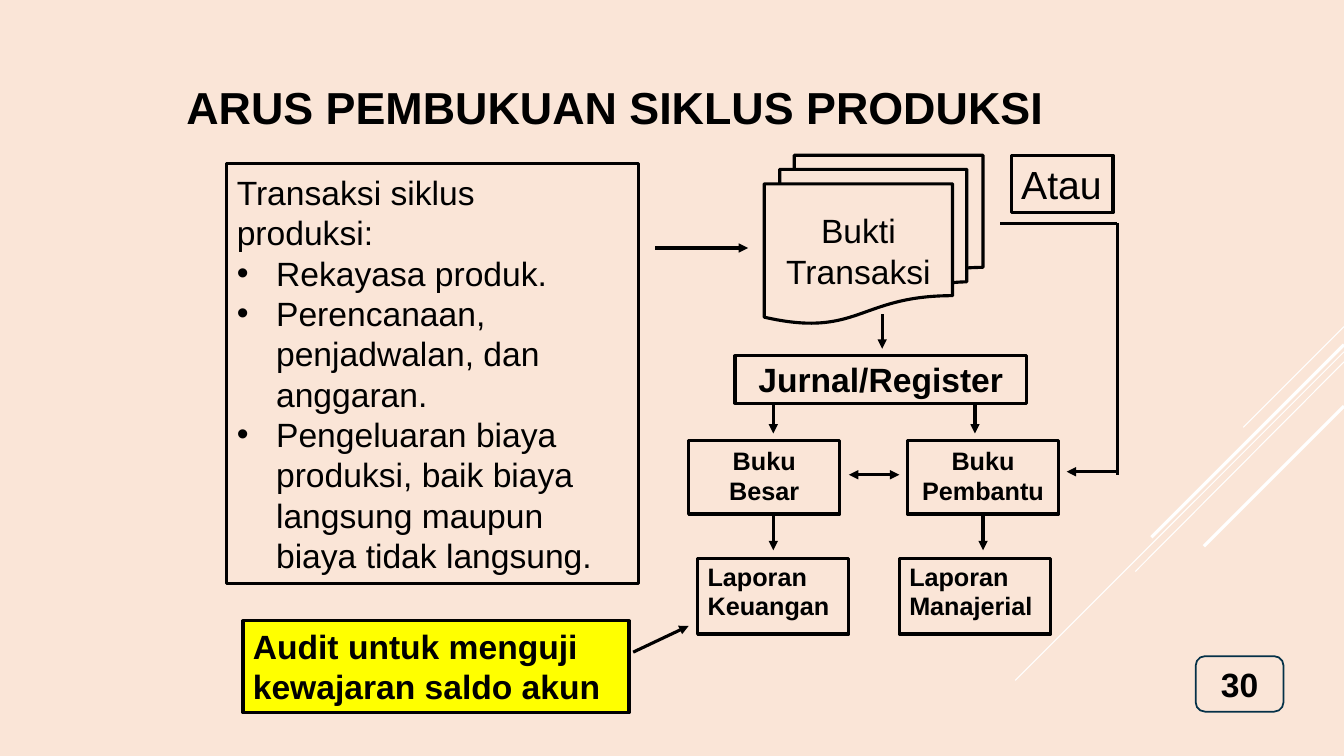
"""Build the slide on the bookkeeping flow of the production cycle."""
from lxml import etree
from pptx import Presentation
from pptx.dml.color import RGBColor
from pptx.enum.shapes import MSO_CONNECTOR as Connector, MSO_SHAPE as Shape
from pptx.enum.text import MSO_ANCHOR as Anchor, PP_ALIGN as Align
from pptx.oxml.ns import qn
from pptx.util import Inches, Pt

PEACH, BLACK, WHITE, YELLOW, NAVY = "FAE5D7", "000000", "FFFFFF", "FFFF00", "043148"


def paint(color_format, hex_color):
    color_format.rgb = RGBColor.from_string(hex_color)


def write(frame, paragraphs, size, bold, align, anchor):
    frame.word_wrap = True
    frame.vertical_anchor = anchor
    for index, words in enumerate(paragraphs):
        paragraph = frame.paragraphs[0] if index == 0 else frame.add_paragraph()
        paragraph.alignment = align
        run = paragraph.add_run()
        run.text = words
        run.font.name, run.font.size, run.font.bold = "Arial", Pt(size), bold
        paint(run.font.color, BLACK)


deck = Presentation()
deck.slide_width, deck.slide_height = Inches(13.33), Inches(7.5)
slide = deck.slides.add_slide(deck.slide_layouts[6])
slide.background.fill.solid()
paint(slide.background.fill.fore_color, PEACH)

rays = [
    (13.33, 3.24, 12.33, 4.24, WHITE, 0.75, ()),
    (13.33, 3.49, 10.07, 6.75, WHITE, 0.75, ()),
    (13.33, 3.59, 11.26, 5.67, WHITE, 0.75, ()),
    (13.33, 3.42, 11.42, 5.33, WHITE, 2.25, ()),
    (13.33, 4.03, 11.94, 5.42, WHITE, 2.25, ()),
]
alternative_route = [
    (9.92, 2.22, 11.08, 2.22, BLACK, 2.25, ()),
    (11.08, 2.21, 11.08, 4.71, BLACK, 2.25, ()),
    (11.08, 4.68, 10.58, 4.68, BLACK, 2.25, ("tailEnd",)),
]
flow_arrows = [
    (6.5, 2.46, 7.42, 2.46, BLACK, 2.25, ("tailEnd",)),
    (6.28, 6.47, 6.83, 6.21, BLACK, 2.25, ("tailEnd",)),
    (8.42, 4.71, 8.92, 4.71, BLACK, 2.25, ("headEnd", "tailEnd")),
]
down_arrows = [
    (x, y, x, y + 0.34, BLACK, 2.25, ("tailEnd",))
    for x, y in [(8.75, 3.12), (7.67, 3.96), (9.67, 3.96), (7.67, 5.12), (9.75, 5.12)]
]
for x1, y1, x2, y2, color, weight, ends in rays + alternative_route + flow_arrows + down_arrows:
    stroke = slide.shapes.add_connector(
        Connector.STRAIGHT, Inches(x1), Inches(y1), Inches(x2), Inches(y2))
    paint(stroke.line.color, color)
    stroke.line.width = Pt(weight)
    for end in ends:
        etree.SubElement(stroke.line._get_or_add_ln(), qn(f"a:{end}"), type="triangle")
    etree.SubElement(stroke._element.spPr, qn("a:effectLst"))

title = slide.shapes.add_textbox(Inches(1.75), Inches(0.7), Inches(9.33), Inches(0.71))
write(title.text_frame, ["ARUS PEMBUKUAN SIKLUS PRODUKSI"], 32, True, Align.LEFT, Anchor.MIDDLE)

transactions = [
    "Transaksi siklus produksi:",
    "Rekayasa produk.",
    "Perencanaan, penjadwalan, dan anggaran.",
    "Pengeluaran biaya produksi, baik biaya langsung maupun biaya tidak langsung.",
]
boxes = {
    "transactions": (Shape.RECTANGLE, 2.25, 1.62, 4.08, 4.17, transactions,
                     24, False, Align.LEFT, Anchor.MIDDLE),
    "evidence": (Shape.FLOWCHART_MULTIDOCUMENT, 7.58, 1.54, 2.17, 1.67, ["Bukti", "Transaksi"],
                 24, False, Align.CENTER, Anchor.MIDDLE),
    "or": (Shape.RECTANGLE, 10.03, 1.54, 1.01, 0.57, ["Atau"],
           28, False, Align.LEFT, Anchor.TOP),
    "journal": (Shape.RECTANGLE, 7.29, 3.53, 2.89, 0.47, ["Jurnal/Register"],
                24, True, Align.CENTER, Anchor.MIDDLE),
    "ledger": (Shape.RECTANGLE, 6.83, 4.37, 1.5, 0.73, ["Buku Besar"],
               18, True, Align.CENTER, Anchor.TOP),
    "subledger": (Shape.RECTANGLE, 9, 4.37, 1.5, 0.73, ["Buku Pembantu"],
                  18, True, Align.CENTER, Anchor.TOP),
    "financial": (Shape.RECTANGLE, 6.92, 5.54, 1.5, 0.75, ["Laporan", "Keuangan"],
                  18, True, Align.LEFT, Anchor.MIDDLE),
    "managerial": (Shape.RECTANGLE, 8.92, 5.54, 1.5, 0.75, ["Laporan", "Manajerial"],
                   18, True, Align.LEFT, Anchor.MIDDLE),
    "audit": (Shape.RECTANGLE, 2.41, 6.16, 3.83, 0.91,
              ["Audit untuk menguji kewajaran saldo akun"],
              24, True, Align.LEFT, Anchor.TOP),
    "page": (Shape.ROUNDED_RECTANGLE, 11.86, 6.51, 0.87, 0.55, ["30"],
             24, True, Align.CENTER, Anchor.MIDDLE),
}
drawn = {}
for part, (outline, left, top, width, height, *content) in boxes.items():
    box = slide.shapes.add_shape(
        outline, Inches(left), Inches(top), Inches(width), Inches(height))
    box.shadow.inherit = False
    box.fill.solid()
    paint(box.fill.fore_color, YELLOW if part == "audit" else PEACH)
    paint(box.line.color, NAVY if part == "page" else BLACK)
    box.line.width = Pt(1.25 if part == "page" else 2.25)
    write(box.text_frame, *content)
    drawn[part] = box.text_frame

drawn["or"].word_wrap = False
drawn["transactions"].margin_right = Inches(0.35)
for item in drawn["transactions"].paragraphs[1:]:
    properties = item._p.get_or_add_pPr()
    properties.set("marL", str(Inches(0.39)))
    properties.set("indent", str(-Inches(0.39)))
    etree.SubElement(properties, qn("a:buFont"), typeface="Arial")
    etree.SubElement(properties, qn("a:buChar"), char="•")
for report in ("financial", "managerial"):
    for line in drawn[report].paragraphs:
        line.line_spacing = 0.55
        line.space_before = Pt(9)

deck.save("out.pptx")
